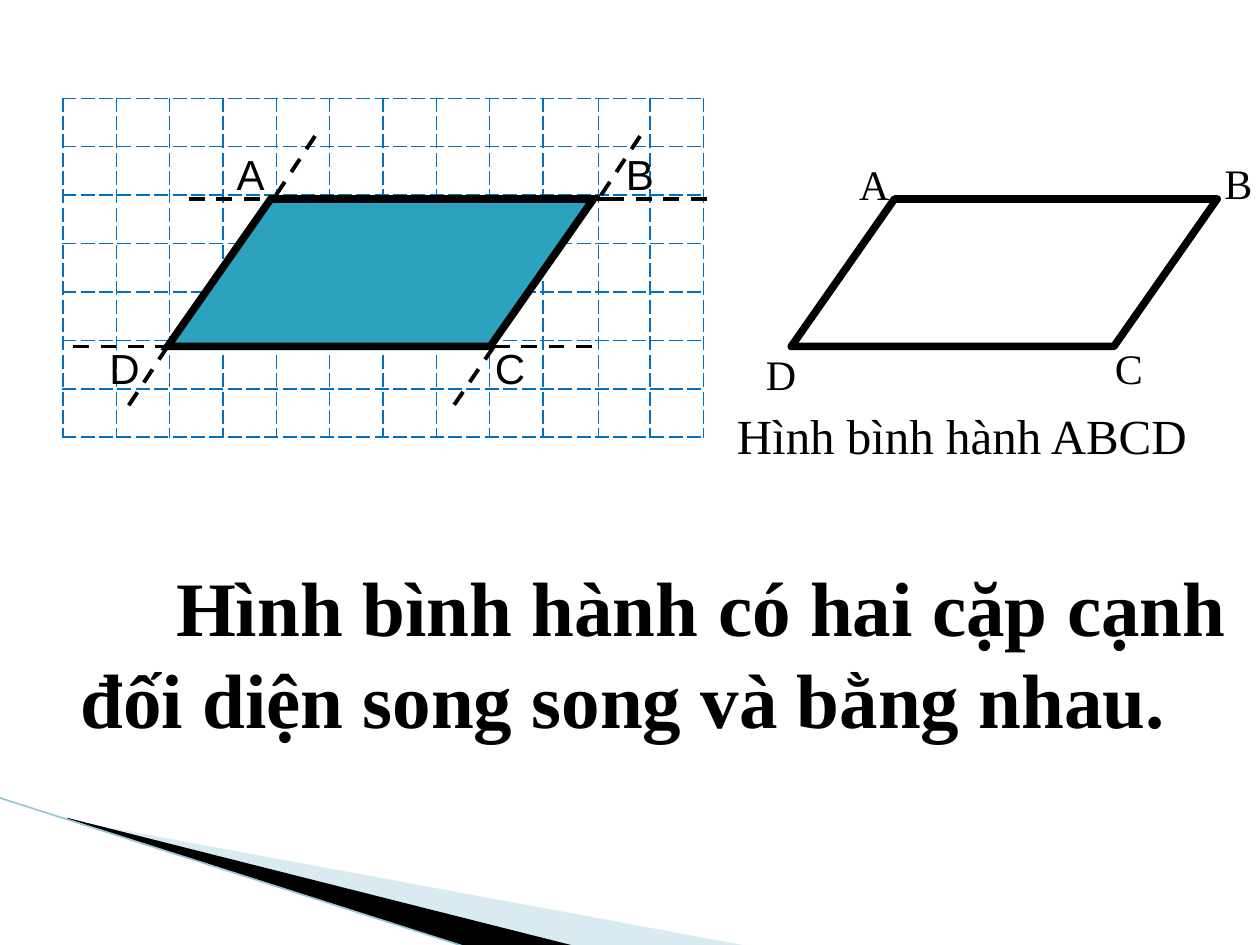
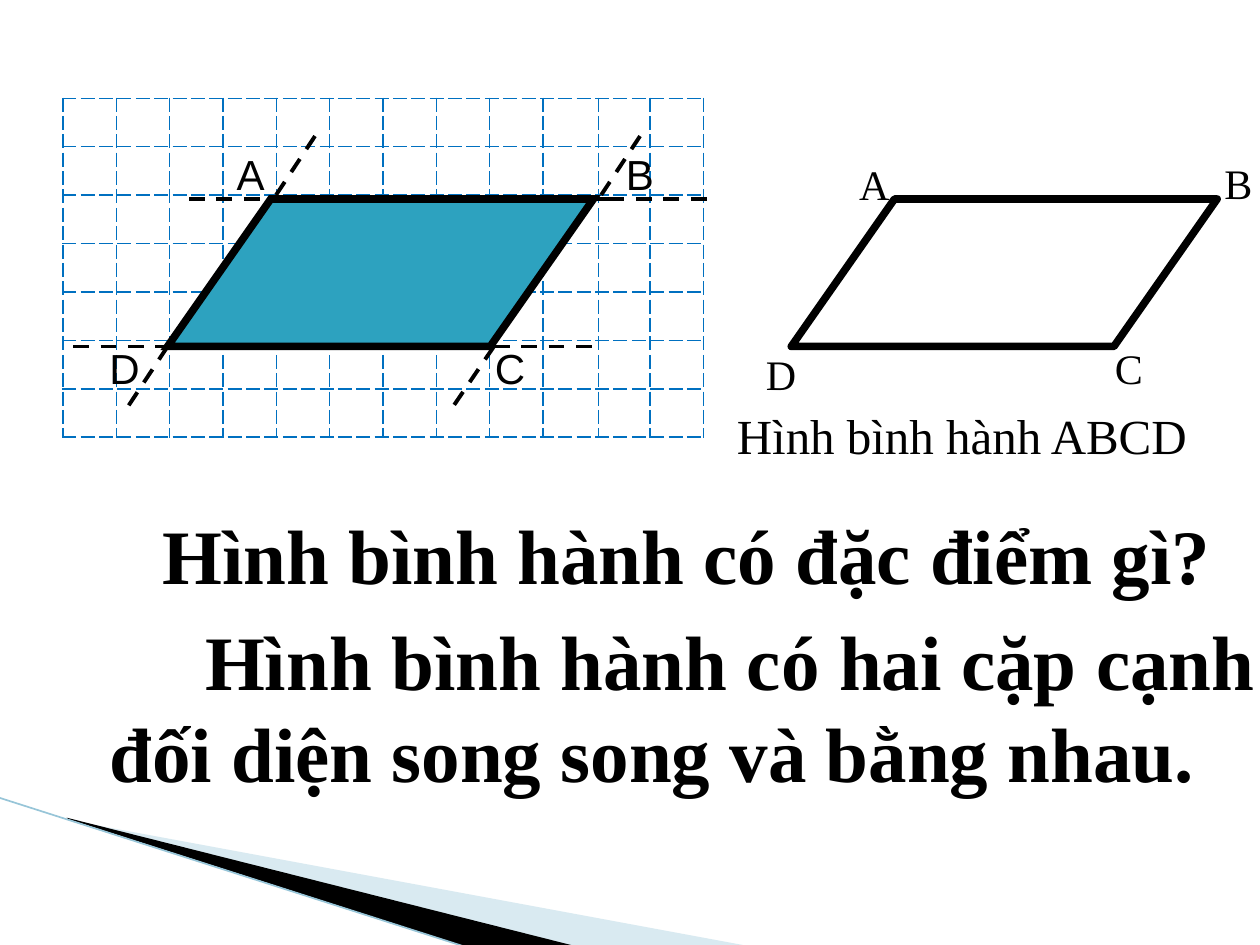
import lxml.etree
import pptx
import pptx.dml.color
import pptx.enum.dml
import pptx.enum.shapes
import pptx.enum.text
import pptx.oxml
import pptx.oxml.ns
import pptx.util

Inches = pptx.util.Inches
Pt = pptx.util.Pt
qn = pptx.oxml.ns.qn
Dash = pptx.enum.dml.MSO_LINE
Align = pptx.enum.text.PP_ALIGN

COLORS = {
    "black": "000000",
    "white": "FFFFFF",
    "teal": "2DA2BF",
    "grid": "0070C0",
    "pale": "A0CBDC",
    "edge": "97C5D8",
}
SERIF = "Times New Roman"
LABEL = {"size": Pt(24), "name": "Arial"}
SERIF_LABEL = {"size": Pt(24), "name": SERIF}
CAPTION = {"size": Pt(28), "name": SERIF}
STATEMENT = {"size": Pt(44), "name": SERIF, "bold": True}

TOP, BOTTOM = 1.58, 2.75
SOLID_SIDES = [
    (2.25, TOP, 4.83, TOP),
    (1.33, BOTTOM, 3.92, BOTTOM),
    (2.17, TOP, 1.33, BOTTOM),
]
DASHED_EXTENSIONS = [
    (4.83, TOP, 5.67, TOP),
    (1.5, TOP, 2.33, TOP),
    (3.92, BOTTOM, 4.75, BOTTOM),
    (0.58, BOTTOM, 1.42, BOTTOM),
    (2.5, 1.08, 2.17, TOP),
    (1.33, BOTTOM, 1, 3.25),
    (5.08, 1.08, 4.75, TOP),
    (3.92, BOTTOM, 3.58, 3.25),
]
GRID_CORNERS = {"A": (1.78, 1.13), "B": (4.87, 1.13), "C": (3.83, 2.67), "D": (0.77, 2.67)}
PLAIN_CORNERS = {"A": (6.72, 1.21), "B": (9.62, 1.2), "C": (8.75, 2.67), "D": (5.98, 2.72)}

QUESTION = "Hình bình hành có đặc điểm gì?"
ANSWER = "Hình bình hành có hai cặp cạnh đối diện song song và bằng nhau."


def rgb(color):
    return pptx.dml.color.RGBColor.from_string(COLORS[color])


def apply_format(target, values):
    for name, value in values.items():
        setattr(target, name, value)


def fill_with(target, color):
    target.fill.solid()
    target.fill.fore_color.rgb = rgb(color)


def add_line(shapes, ends, color="black", width=2.25, dash=None):
    line = shapes.add_connector(
        pptx.enum.shapes.MSO_CONNECTOR.STRAIGHT, *[Inches(value) for value in ends]
    )
    line.line.color.rgb = rgb(color)
    apply_format(line.line, {"width": Pt(width), "dash_style": dash})
    lxml.etree.SubElement(line._element.spPr, qn("a:effectLst"))


def add_text(shapes, text, place, text_format, align=None, indent=0):
    box = shapes.add_textbox(*[Inches(value) for value in place])
    frame = box.text_frame
    apply_format(frame, {
        "word_wrap": True,
        "auto_size": pptx.enum.text.MSO_AUTO_SIZE.SHAPE_TO_FIT_TEXT,
    })
    para = frame.paragraphs[0]
    para.alignment = align
    if indent:
        para._p.get_or_add_pPr().set("indent", str(Inches(indent)))
    span = para.add_run()
    span.text = text
    apply_format(span.font, text_format)
    span.font.color.rgb = rgb("black")


def add_corner_labels(shapes, corners, text_format):
    for letter, (left, top) in corners.items():
        add_text(shapes, letter, (left, top, 0.33, 0.5), text_format)


def add_parallelogram(shapes, left, join, color=None):
    shape = shapes.add_shape(
        pptx.enum.shapes.MSO_SHAPE.PARALLELOGRAM,
        Inches(left), Inches(TOP), Inches(3.38), Inches(BOTTOM - TOP),
    )
    shape.adjustments[0] = 0.7
    shape.shadow.inherit = False
    if color:
        fill_with(shape, color)
    else:
        shape.fill.background()
    shape.line.color.rgb = rgb("black")
    shape.line.width = Pt(4.33)
    lxml.etree.SubElement(shape.line._get_or_add_ln(), qn(join))


def add_wedge(shapes, points, color, alpha=None):
    start, *rest = [(Inches(x), Inches(y)) for x, y in points]
    builder = shapes.build_freeform(*start, scale=1.0)
    builder.add_line_segments(rest, close=True)
    wedge = builder.convert_to_shape()
    wedge.shadow.inherit = False
    fill_with(wedge, color)
    wedge.line.fill.background()
    if alpha:
        tint = wedge._element.spPr.find(".//" + qn("a:srgbClr"))
        lxml.etree.SubElement(tint, qn("a:alpha"), val=str(alpha * 1000))


def add_corner_band(shapes):
    add_wedge(shapes, [(0.55, 6.51), (5.95, 7.51), (4.56, 7.51), (0.55, 6.5)], "pale", 40)
    add_wedge(shapes, [(0.53, 6.49), (4.57, 7.51), (3.72, 7.52), (0.54, 6.5)], "black")
    add_line(shapes, (-0.01, 6.33, 3.71, 7.52), "edge", 0.95)


def add_cell_borders(cell):
    properties = cell._tc.get_or_add_tcPr()
    for side in ("a:lnL", "a:lnR", "a:lnT", "a:lnB"):
        border = lxml.etree.SubElement(properties, qn(side), w=str(Pt(1)))
        paint = lxml.etree.SubElement(border, qn("a:solidFill"))
        lxml.etree.SubElement(paint, qn("a:srgbClr"), val=COLORS["grid"])
        lxml.etree.SubElement(border, qn("a:prstDash"), val="sysDash")


def add_square_grid(shapes):
    rows, columns, width, height = 7, 12, 5.08, 2.69
    table = shapes.add_table(
        rows, columns, Inches(0.5), Inches(0.78), Inches(width), Inches(height)
    ).table
    apply_format(table, {"first_row": False, "horz_banding": False})
    widths = [width / columns] * columns
    widths[9:11] = [0.44, 0.41]
    for column, column_width in zip(table.columns, widths):
        column.width = Inches(column_width)
    for cell in table.iter_cells():
        apply_format(cell, {"margin_top": 0, "margin_bottom": 0})
        add_cell_borders(cell)
        fill_with(cell, "white")


def add_figures(shapes):
    add_square_grid(shapes)
    sides = shapes.add_group_shape().shapes
    for ends in SOLID_SIDES:
        add_line(sides, ends)
    for ends in DASHED_EXTENSIONS:
        add_line(sides, ends, dash=Dash.DASH)
    add_corner_labels(shapes.add_group_shape().shapes, GRID_CORNERS, LABEL)
    add_parallelogram(shapes, 1.33, "a:miter", "teal")
    plain = shapes.add_group_shape().shapes
    add_corner_labels(plain, PLAIN_CORNERS, SERIF_LABEL)
    add_parallelogram(plain, 6.28, "a:round")
    add_text(plain, "Hình bình hành ABCD", (5.75, 3.17, 4.03, 0.57), CAPTION)


def add_statement(shapes, text, left, top, height):
    add_text(shapes, text, (left, top, 9.3, height), STATEMENT, Align.JUSTIFY, 0.76)


def add_page(deck, statements):
    shapes = deck.slides.add_slide(deck.slide_layouts[6]).shapes
    add_corner_band(shapes)
    add_figures(shapes)
    for statement in statements:
        add_statement(shapes, *statement)


def main():
    deck = pptx.Presentation()
    apply_format(deck, {"slide_width": Inches(10), "slide_height": Inches(7.5)})
    add_page(deck, [(ANSWER, 0.54, 4.39, 1.58)])
    add_page(deck, [(QUESTION, 0.43, 3.98, 0.84), (ANSWER, 0.77, 4.82, 1.58)])
    deck.save("out.pptx")


if __name__ == "__main__":
    main()
